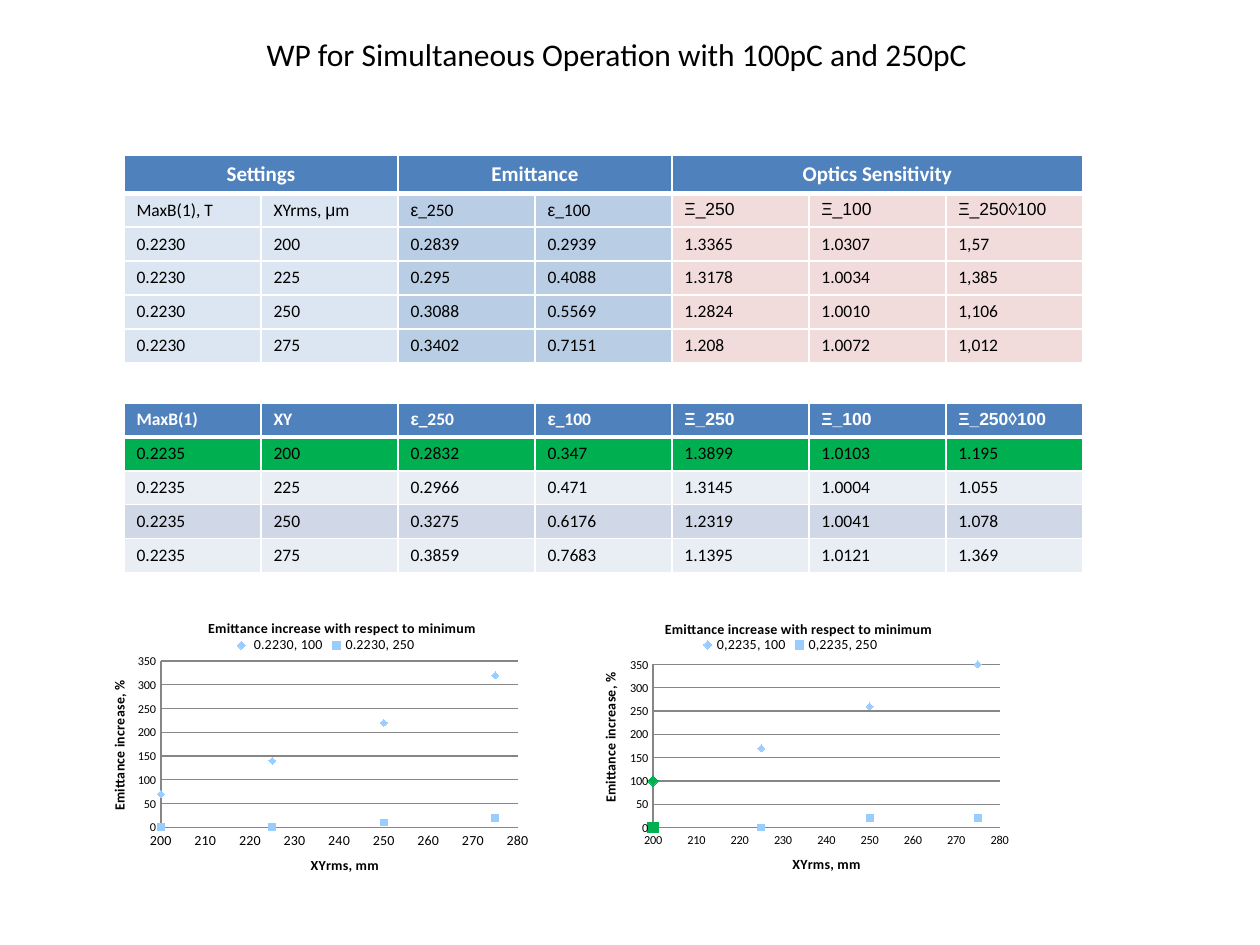
from itertools import groupby
from lxml.etree import SubElement as Sub
from pptx import Presentation
from pptx.chart.data import XyChartData
from pptx.dml.color import RGBColor as RGB
from pptx.enum.chart import XL_CHART_TYPE as Kind, XL_LEGEND_POSITION as Side
from pptx.enum.chart import XL_MARKER_STYLE as Mark, XL_TICK_MARK as Tick
from pptx.enum.text import MSO_ANCHOR as Anchor, PP_ALIGN as Align
from pptx.oxml import parse_xml
from pptx.oxml.ns import nsdecls, qn
from pptx.util import Emu, Pt

WHITE, BLACK = RGB(255, 255, 255), RGB(0, 0, 0)
BLUE, SKY, PALE = RGB(0x4F, 0x81, 0xBD), RGB(0xB9, 0xCD, 0xE5), RGB(0xDC, 0xE6, 0xF2)
PINK, GREEN = RGB(0xF2, 0xDC, 0xDB), RGB(0, 0xB0, 0x50)
LIGHT, DARK = RGB(0xE9, 0xED, 0xF4), RGB(0xD0, 0xD8, 0xE8)
DOT, GREY = RGB(0x99, 0xCC, 0xFF), RGB(0x86, 0x86, 0x86)
COLS, COL_W, ROW_H, LEFT = 7, 137, 33, 124

GROUPS = ["Settings", "", "Emittance", "", "Optics Sensitivity", "", ""]
NAMES = ["ε_250", "ε_100", "Ξ_250", "Ξ_100", "Ξ_250◊100"]
FIRST = """0.2230 200 0.2839 0.2939 1.3365 1.0307 1,57
0.2230 225 0.295 0.4088 1.3178 1.0034 1,385
0.2230 250 0.3088 0.5569 1.2824 1.0010 1,106
0.2230 275 0.3402 0.7151 1.208 1.0072 1,012"""
SECOND = """0.2235 200 0.2832 0.347 1.3899 1.0103 1.195
0.2235 225 0.2966 0.471 1.3145 1.0004 1.055
0.2235 250 0.3275 0.6176 1.2319 1.0041 1.078
0.2235 275 0.3859 0.7683 1.1395 1.0121 1.369"""
XS = [200, 225, 250, 275]


def px(*vals):
    """Turn pixel lengths into EMU."""
    return [Emu(round(v * 914400 / 126)) for v in vals]


def style(font, size, color=BLACK, bold=False, name="Calibri"):
    """Set the look of a font."""
    font.size, font.bold, font.name = Pt(size), bold, name
    font.color.rgb = color


def add_title(slide, text):
    """Fill and move the title placeholder."""
    shape = slide.shapes.title
    shape.left, shape.top, shape.width, shape.height = px(246, 29, 742, 50)
    frame = shape.text_frame
    frame.text, frame.word_wrap = text, False
    frame.vertical_anchor = Anchor.TOP
    para = frame.paragraphs[0]
    para.alignment = Align.CENTER
    style(para.font, 18)


def edge(cell, head):
    """Draw white borders, with a thick one under a head cell."""
    props = cell._tc.get_or_add_tcPr()
    for at, side in enumerate(("lnL", "lnR", "lnT", "lnB")):
        width = Pt(3 if head and side == "lnB" else 1)
        props.insert(at, parse_xml(
            f'<a:{side} {nsdecls("a")} w="{width}"><a:solidFill>'
            f'<a:srgbClr val="{WHITE}"/></a:solidFill></a:{side}>'))


def fill_cell(cell, text, fill, head, size):
    """Write one cell, with Greek letters in Arial."""
    cell.fill.solid()
    cell.fill.fore_color.rgb = fill
    edge(cell, head)
    para = cell.text_frame.paragraphs[0]
    name = "Arial" if text.startswith("Ξ") else "Calibri"
    style(para.font, size, WHITE if head else BLACK, head, name)
    for greek, part in groupby(text, lambda sign: sign in "με"):
        run = para.add_run()
        run.text = "".join(part)
        if greek:
            run.font.name = "Arial"


def add_grid(slide, top, rows, fills, size=10):
    """Add a table whose first row is the head."""
    box = px(LEFT, top, COLS * COL_W, len(rows) * ROW_H)
    table = slide.shapes.add_table(len(rows), COLS, *box).table
    table.horz_banding = False
    for col in table.columns:
        col.width = px(COL_W)[0]
    for r, (row, tints) in enumerate(zip(rows, fills)):
        table.rows[r].height = px(ROW_H)[0]
        for c, (text, tint) in enumerate(zip(row, tints)):
            fill_cell(table.cell(r, c), text, tint, r == 0, size if r == 0 else 10)
    return table


def group_head(table, spans):
    """Merge and centre the head cells."""
    for start, end in spans:
        table.cell(0, start).merge(table.cell(0, end))
        table.cell(0, start).text_frame.paragraphs[0].alignment = Align.CENTER


def place(part, at, x, y, w=None, h=None):
    """Give a chart part a fixed place."""
    for old in part.findall(qn("c:layout")):
        part.remove(old)
    layout = parse_xml(f'<c:layout {nsdecls("c")}/>')
    spot = Sub(layout, qn("c:manualLayout"))
    vals = [("xMode", "edge"), ("yMode", "edge"), ("x", x), ("y", y)]
    if w:
        vals = [("layoutTarget", "inner"), *vals, ("w", w), ("h", h)]
    for tag, val in vals:
        Sub(spot, qn(f"c:{tag}")).set("val", str(val))
    part.insert(at, layout)


def set_text(title, text):
    """Write a chart or axis title."""
    title.text_frame.text = text
    style(title.text_frame.paragraphs[0].font, 8, bold=True)


def set_axis(axis, text, size, low, high, step):
    """Format one axis."""
    axis.minimum_scale, axis.maximum_scale, axis.major_unit = low, high, step
    axis.major_tick_mark = axis.minor_tick_mark = Tick.NONE
    axis.format.line.color.rgb = GREY
    style(axis.tick_labels.font, size)
    set_text(axis.axis_title, text)


def paint(item, shape, size, color):
    """Format the marker of a series or point."""
    item.marker.style, item.marker.size = shape, size
    item.marker.format.fill.solid()
    item.marker.format.fill.fore_color.rgb = color
    item.marker.format.line.color.rgb = color


def add_plot(slide, box, series, size, spots, plot, green=False):
    """Add a scatter chart of emittance increase."""
    data = XyChartData()
    for name, vals in series:
        line = data.add_series(name)
        for x, y in zip(XS, vals):
            line.add_data_point(x, y)
    chart = slide.shapes.add_chart(Kind.XY_SCATTER, *px(*box), data).chart
    style(chart.font, 10)
    chart.plots[0].vary_by_categories = False
    set_text(chart.chart_title, "Emittance increase with respect to minimum")
    chart.has_legend = True
    chart.legend.position, chart.legend.include_in_layout = Side.TOP, False
    style(chart.legend.font, 8)
    set_axis(chart.category_axis, "XYrms, mm", size, 200, 280, 10)
    set_axis(chart.value_axis, "Emittance increase, %", 7, 0, 350, 50)
    chart.category_axis.has_major_gridlines = False
    chart.value_axis.major_gridlines.format.line.color.rgb = GREY
    turn = chart.value_axis.axis_title.text_frame._txBody.bodyPr
    turn.set("rot", "-5400000")
    turn.set("vert", "horz")
    for line, shape in zip(chart.plots[0].series, (Mark.DIAMOND, Mark.SQUARE)):
        line.format.line.fill.background()
        paint(line, shape, 4, DOT)
        if green:
            paint(line.points[0], shape, 6, GREEN)
    root = chart._chartSpace
    for part, spot in zip(root.xpath(".//c:title") + root.xpath(".//c:legend"), spots):
        place(part, 1, *spot)
    place(root.xpath(".//c:plotArea")[0], 0, *plot)


def main():
    """Build the slide."""
    deck = Presentation()
    deck.slide_width, deck.slide_height = px(1260, 945)
    slide = deck.slides.add_slide(deck.slide_layouts[5])
    add_title(slide, "WP for Simultaneous Operation with 100pC and 250pC")
    body = [PALE] * 2 + [SKY] * 2 + [PINK] * 3
    rows = [GROUPS, ["MaxB(1), T", "XYrms, μm", *NAMES]]
    rows += [line.split() for line in FIRST.splitlines()]
    table = add_grid(slide, 155, rows, [[BLUE] * COLS] + [body] * 5, 12)
    group_head(table, [(0, 1), (2, 3), (4, 6)])
    rows = [["MaxB(1)", "XY", *NAMES]] + [line.split() for line in SECOND.splitlines()]
    add_grid(slide, 403, rows, [[tint] * COLS for tint in (BLUE, GREEN, LIGHT, DARK, LIGHT)])
    add_plot(slide, (94, 611, 446, 268),
             [(" 0.2230, 100", [70, 140, 220, 320]), ("0.2230, 250", [0, 0, 10, 20])], 8,
             [(0.25, 0.02), (0.48, 0.92), (0.03, 0.26), (0.31, 0.08)],
             (0.15, 0.19, 0.8, 0.63))
    add_plot(slide, (571, 601, 456, 277),
             [("0,2235, 100", [100, 170, 260, 350]), ("0,2235, 250", [0, 0, 20, 20])], 7,
             [(0.2, 0.06), (0.48, 0.91), (0.06, 0.25), (0.28, 0.11)],
             (0.18, 0.23, 0.76, 0.59), True)
    deck.save("out.pptx")


if __name__ == "__main__":
    main()
